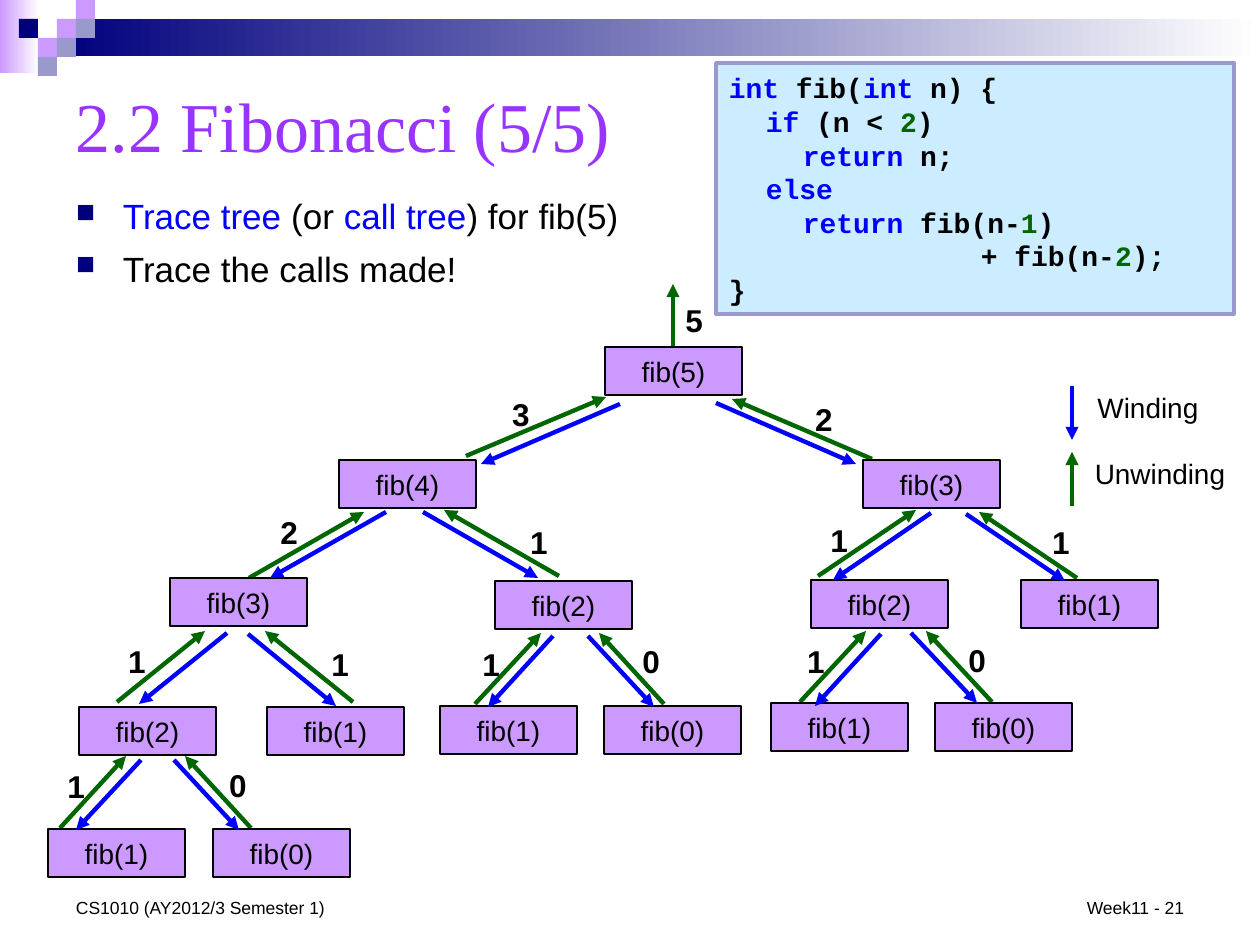
import lxml.etree
import pptx
import pptx.dml.color
import pptx.enum.shapes
import pptx.enum.text
import pptx.oxml.ns
import pptx.util

THEME = {
    "colour": {
        "black": "000000", "blue": "0000FF", "green": "006600", "violet": "9933FF",
        "lilac": "CC99FF", "navy": "00007D", "slate": "9999CC", "ice": "CCECFF",
        "white": "FFFFFF",
    },
    "font": {"title": "Times New Roman", "body": "Arial", "code": "Courier New"},
    "size": {"title": 40, "body": 20, "value": 18, "node": 16, "footer": 10},
}
COLOUR = {name: pptx.dml.color.RGBColor.from_string(value)
          for name, value in THEME["colour"].items()}
FONT, SIZE = THEME["font"], THEME["size"]
SCALE = 914400 / 126  # EMU in one px
RECTANGLE = pptx.enum.shapes.MSO_SHAPE.RECTANGLE
ALIGN = pptx.enum.text.PP_ALIGN
ANCHOR = pptx.enum.text.MSO_ANCHOR
qn = pptx.oxml.ns.qn

presentation = pptx.Presentation()
presentation.slide_width = round(1260 * SCALE)
presentation.slide_height = round(945 * SCALE)
slide = presentation.slides.add_slide(presentation.slide_layouts[6])


def add_text(text, box, size, font="body", colour="black", bold=False, align=ALIGN.LEFT,
             anchor=ANCHOR.MIDDLE, fill=None, line=None, line_width=1, insets=(13, 6),
             indents=None, bullet=False, space_before=0, line_spacing=None):
    """Place text in a px box; text is a string or paragraphs of (words, colour) runs."""
    emu = [round(length * SCALE) for length in box]
    if fill:
        shape = slide.shapes.add_shape(RECTANGLE, *emu)
        shape.shadow.inherit = False
        shape.fill.solid()
        shape.fill.fore_color.rgb = COLOUR[fill]
        shape.line.color.rgb = COLOUR[line]
        shape.line.width = pptx.util.Pt(line_width)
    else:
        shape = slide.shapes.add_textbox(*emu)
    frame = shape.text_frame
    frame.word_wrap = True
    frame.vertical_anchor = anchor
    frame.margin_left = frame.margin_right = round(insets[0] * SCALE)
    frame.margin_top = frame.margin_bottom = round(insets[1] * SCALE)
    paragraphs = [[(text, colour)]] if isinstance(text, str) else text
    for index, runs in enumerate(paragraphs):
        paragraph = frame.add_paragraph() if index else frame.paragraphs[0]
        paragraph.alignment = align
        paragraph.space_before = pptx.util.Pt(space_before)
        if line_spacing:
            paragraph.line_spacing = pptx.util.Pt(line_spacing)
        properties = paragraph._p.get_or_add_pPr()
        if indents:
            properties.set("marL", str(round(indents[index] * SCALE)))
        if bullet:
            properties.set("indent", str(-round(indents[index] * SCALE)))
            bullet_colour = lxml.etree.SubElement(properties, qn("a:buClr"))
            lxml.etree.SubElement(bullet_colour, qn("a:srgbClr"), val=THEME["colour"]["navy"])
            lxml.etree.SubElement(properties, qn("a:buSzPct"), val="75000")
            lxml.etree.SubElement(properties, qn("a:buChar"), char="■")
        for words, run_colour in runs:
            run = paragraph.add_run()
            run.text = words
            run.font.name = FONT[font]
            run.font.size = pptx.util.Pt(size)
            run.font.bold = bold
            run.font.color.rgb = COLOUR[run_colour]


def add_arrow(ends, colour):
    connector = slide.shapes.add_connector(
        pptx.enum.shapes.MSO_CONNECTOR.STRAIGHT, *[round(end * SCALE) for end in ends])
    connector.line.color.rgb = COLOUR[colour]
    connector.line.width = pptx.util.Pt(2.5)
    lxml.etree.SubElement(connector.line._get_or_add_ln(), qn("a:tailEnd"), type="triangle")
    lxml.etree.SubElement(connector._element.spPr, qn("a:effectLst"))


# Banner: two fading bars, then a mosaic of squares
banner = [
    (0, 0, 39, 73, ("lilac", "white")),
    (57, 19, 1203, 37, ("navy", "white")),
]
mosaic = [(3, 1, "lilac"), (4, 0, "lilac"), (4, 1, "slate"), (2, 2, "lilac"),
          (1, 1, "navy"), (3, 2, "slate"), (2, 3, "slate")]
banner += [(19 * column, 19 * row, 19, 19, (colour,)) for column, row, colour in mosaic]
for *box, colours in banner:
    shape = slide.shapes.add_shape(RECTANGLE, *[round(length * SCALE) for length in box])
    shape.shadow.inherit = False
    shape.line.fill.background()
    if len(colours) == 1:
        shape.fill.solid()
        shape.fill.fore_color.rgb = COLOUR[colours[0]]
    else:
        shape.fill.gradient()
        shape.fill.gradient_angle = 0
        for stop, colour in zip(shape.fill.gradient_stops, colours):
            stop.color.rgb = COLOUR[colour]

# Title and bullets
add_text("2.2 Fibonacci (5/5)", (63, 63, 1134, 123), SIZE["title"], font="title",
         colour="violet")
add_text([[("Trace tree ", "blue"), ("(or ", "black"), ("call tree", "blue"),
           (") for fib(5)", "black")],
          [("Trace the calls made!", "black")]],
         (63, 189, 770, 127), SIZE["body"], anchor=ANCHOR.TOP, indents=(47, 47),
         bullet=True, space_before=6)

# Calls: name, box corner, result, result corner, unwinding arrow, winding arrow
calls = [
    ("fib(5)", (605, 347), "5", (673, 300), (673, 346, 673, 284), None),
    ("fib(4)", (339, 460), "3", (500, 394), (466, 456, 606, 397), (620, 404, 481, 464)),
    ("fib(3)", (863, 460), "2", (803, 399), (872, 459, 732, 399), (716, 403, 856, 464)),
    ("fib(3)", (170, 578), "2", (268, 512), (249, 578, 364, 512), (386, 512, 270, 578)),
    ("fib(2)", (495, 581), "1", (518, 522), (559, 576, 444, 510), (423, 512, 538, 578)),
    ("fib(2)", (811, 580), "1", (818, 520), (818, 576, 916, 510), (931, 513, 833, 580)),
    ("fib(1)", (1021, 580), "1", (1040, 522), (1077, 578, 979, 512), (966, 514, 1065, 581)),
    ("fib(2)", (79, 707), "1", (116, 641), (117, 702, 205, 631), (227, 633, 139, 704)),
    ("fib(1)", (267, 707), "1", (319, 644), (353, 702, 265, 631), (248, 634, 336, 706)),
    ("fib(1)", (440, 706), "1", (470, 644), (475, 704, 541, 633), (553, 636, 488, 707)),
    ("fib(0)", (604, 706), "0", (630, 641), (664, 704, 599, 633), (588, 636, 654, 707)),
    ("fib(1)", (771, 703), "1", (795, 641), (800, 702, 866, 631), (881, 634, 815, 706)),
    ("fib(0)", (935, 703), "0", (956, 640), (992, 702, 926, 631), (911, 633, 977, 703)),
    ("fib(1)", (48, 829), "1", (55, 766), (60, 828, 126, 756), (141, 760, 76, 830)),
    ("fib(0)", (213, 829), "0", (217, 765), (251, 828, 185, 756), (174, 760, 239, 830)),
]
for name, corner, result, result_corner, unwinding, winding in calls:
    add_arrow(unwinding, "green")
    add_text(result, (*result_corner, 42, 39), SIZE["value"], bold=True,
             align=ALIGN.CENTER, insets=(0, 0))
for name, corner, *rest in calls:
    add_text(name, (*corner, 137, 48), SIZE["node"], align=ALIGN.CENTER,
             fill="lilac", line="black")
for *rest, winding in calls:
    if winding:
        add_arrow(winding, "blue")

# Legend
for label, box, ends, colour in [
    ("Winding", (1079, 384, 138, 47), (1072, 386, 1072, 440), "blue"),
    ("Unwinding", (1079, 450, 162, 47), (1072, 506, 1072, 452), "green"),
]:
    add_arrow(ends, colour)
    add_text(label, box, SIZE["node"], align=ALIGN.CENTER)

# Code
code = [
    (0, [("int", "blue"), (" fib(", "black"), ("int", "blue"), (" n) {", "black")]),
    (37, [("if", "blue"), (" (n < ", "black"), ("2", "green"), (")", "black")]),
    (74, [("return", "blue"), (" n;", "black")]),
    (37, [("else", "blue")]),
    (74, [("return", "blue"), (" fib(n-", "black"), ("1", "green"), (")", "black")]),
    (252, [("+ fib(n-", "black"), ("2", "green"), (");", "black")]),
    (0, [("}", "black")]),
]
add_text([runs for indent, runs in code], (716, 63, 518, 251), SIZE["node"], font="code",
         bold=True, fill="ice", line="slate", line_width=2,
         indents=[indent for indent, runs in code], line_spacing=19.2)

# Footer
add_text("CS1010 (AY2012/3 Semester 1)", (63, 861, 399, 63), SIZE["footer"],
         anchor=ANCHOR.BOTTOM)
add_text("Week11 - 21", (903, 861, 294, 63), SIZE["footer"], align=ALIGN.RIGHT,
         anchor=ANCHOR.BOTTOM)

presentation.save("out.pptx")
